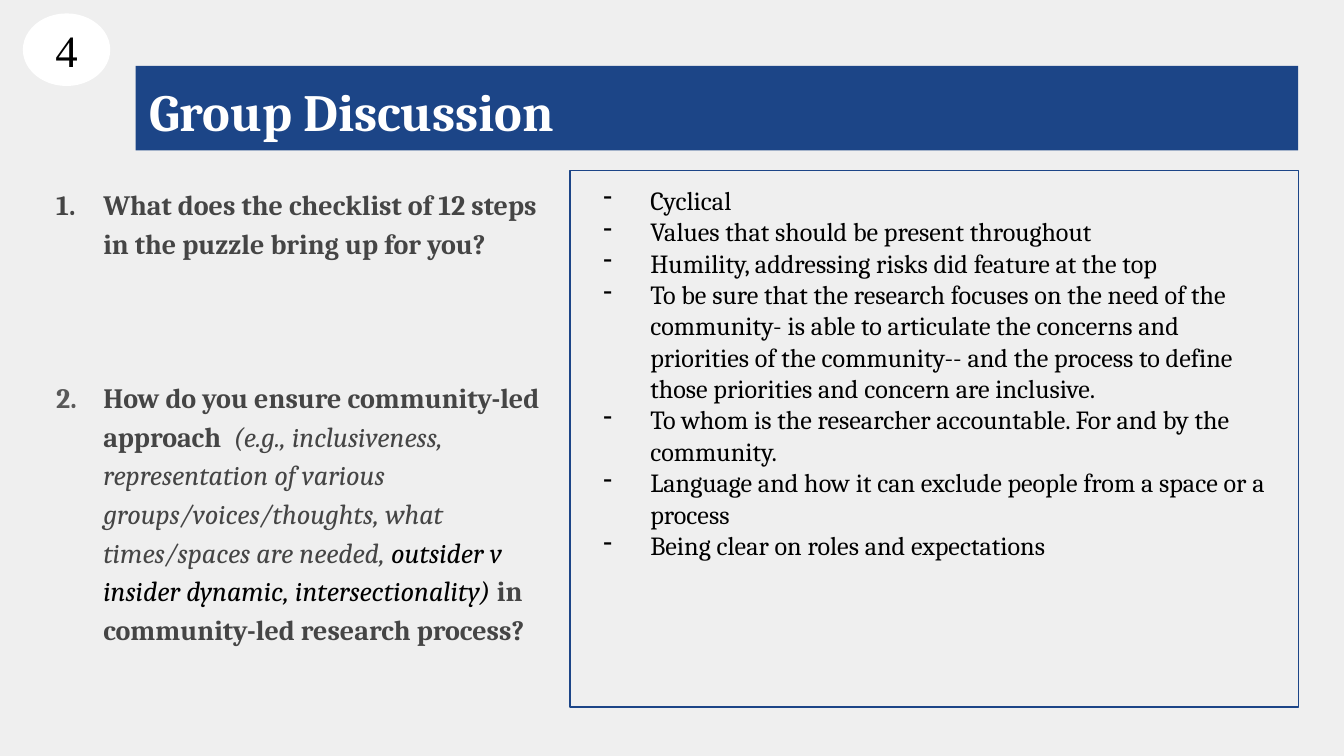
from lxml.etree import SubElement
from pptx import Presentation
from pptx.dml.color import RGBColor
from pptx.enum.shapes import MSO_SHAPE as Shape
from pptx.enum.text import MSO_ANCHOR as Anchor, MSO_AUTO_SIZE as AutoSize, PP_ALIGN as Align
from pptx.oxml.ns import qn
from pptx.util import Inches, Pt

BLUE = RGBColor(0x1C, 0x45, 0x87)
PALE = RGBColor(0xEF, 0xEF, 0xEF)
WHITE = RGBColor(0xFF, 0xFF, 0xFF)
BLACK = RGBColor(0x00, 0x00, 0x00)
DARK = RGBColor(0x45, 0x45, 0x45)
GRAY = RGBColor(0x59, 0x59, 0x59)
SERIF = "Cambria"

# Content
TITLE = "Group Discussion"
NUMBER = "4"
# Each question: number colour, space before in points, runs of (text, colour, bold);
# text that is not bold is italic.
QUESTIONS = [
    (DARK, 0, [
        ("What does the checklist of 12 steps in the puzzle bring up for you?", DARK, True),
    ]),
    (GRAY, 62, [
        ("How do you ensure community-led approach  ", DARK, True),
        ("(e.g., inclusiveness, representation of various groups/voices/thoughts, "
         "what times/spaces are needed, ", DARK, False),
        ("outsider v insider dynamic, intersectionality) ", BLACK, False),
        ("in community-led research process?", DARK, True),
    ]),
]
ANSWERS = [
    "Cyclical",
    "Values that should be present throughout",
    "Humility, addressing risks did feature at the top",
    "To be sure that the research focuses on the need of the community- is able to "
    "articulate the concerns and priorities of the community-- and the process to define "
    "those priorities and concern are inclusive.",
    "To whom is the researcher accountable. For and by the community.",
    "Language and how it can exclude people from a space or a process",
    "Being clear on roles and expectations",
]


def set_frame(shape, anchor=Anchor.TOP):
    frame = shape.text_frame
    frame.word_wrap = True
    frame.auto_size = AutoSize.NONE
    frame.vertical_anchor = anchor
    frame.margin_left = frame.margin_right = Inches(0.1)
    frame.margin_top = frame.margin_bottom = Inches(0.1)
    return frame


def style(run, size, color, font=SERIF, bold=False, italic=False):
    run.font.name = font
    run.font.size = Pt(size)
    run.font.color.rgb = color
    run.font.bold = bold
    run.font.italic = italic


def add_paragraph(frame, index):
    paragraph = frame.add_paragraph() if index else frame.paragraphs[0]
    paragraph.alignment = Align.LEFT
    return paragraph


def add_bullet(paragraph, color, tag, **attributes):
    properties = paragraph._p.get_or_add_pPr()
    properties.set("marL", str(Inches(0.5)))
    properties.set("indent", str(Inches(-0.35)))
    bullet_color = SubElement(properties, qn("a:buClr"))
    SubElement(bullet_color, qn("a:srgbClr"), val=str(color))
    SubElement(properties, qn(tag), **attributes)


def add_plain_shape(slide, kind, left, top, width, height):
    shape = slide.shapes.add_shape(
        kind, Inches(left), Inches(top), Inches(width), Inches(height))
    shape.shadow.inherit = False
    return shape


# Widescreen slide, 16:9
presentation = Presentation()
presentation.slide_width = Inches(10)
presentation.slide_height = Inches(10) * 9 // 16
slide = presentation.slides.add_slide(presentation.slide_layouts[5])
slide.background.fill.solid()
slide.background.fill.fore_color.rgb = PALE

# Title bar
title = slide.shapes.title
title.left, title.top = Inches(1.01), Inches(0.49)
title.width, title.height = Inches(8.65), Inches(0.63)
title.fill.solid()
title.fill.fore_color.rgb = BLUE
title_frame = set_frame(title)
title_frame.text = TITLE
title_frame.paragraphs[0].alignment = Align.LEFT
style(title_frame.paragraphs[0].runs[0], 28, WHITE, bold=True)

# Numbered questions
questions_box = slide.shapes.add_textbox(
    Inches(0.17), Inches(1.26), Inches(4.02), Inches(3.74))
questions_frame = set_frame(questions_box)
for index, (number_color, space, runs) in enumerate(QUESTIONS):
    paragraph = add_paragraph(questions_frame, index)
    paragraph.line_spacing = 1.15
    paragraph.space_before = Pt(space)
    add_bullet(paragraph, number_color, "a:buAutoNum", type="arabicPeriod")
    for text, color, bold in runs:
        run = paragraph.add_run()
        run.text = text
        style(run, 15, color, bold=bold, italic=not bold)

# Outlined answers
answers_box = add_plain_shape(slide, Shape.RECTANGLE, 4.24, 1.27, 5.42, 3.99)
answers_box.fill.background()
answers_box.line.color.rgb = BLUE
answers_box.line.width = Pt(0.75)
answers_frame = set_frame(answers_box)
answers_frame.margin_right = Inches(0.12)
for index, answer in enumerate(ANSWERS):
    paragraph = add_paragraph(answers_frame, index)
    paragraph.text = answer
    add_bullet(paragraph, BLACK, "a:buChar", char="-")
    style(paragraph.runs[0], 14, BLACK)

# Number badge
badge = add_plain_shape(slide, Shape.OVAL, 0.17, 0.1, 0.65, 0.54)
badge.fill.solid()
badge.fill.fore_color.rgb = WHITE
badge.line.fill.background()
badge_frame = set_frame(badge, Anchor.MIDDLE)
badge_frame.text = NUMBER
badge_frame.paragraphs[0].alignment = Align.CENTER
style(badge_frame.paragraphs[0].runs[0], 24, BLACK, font="Times New Roman")

presentation.save("out.pptx")
